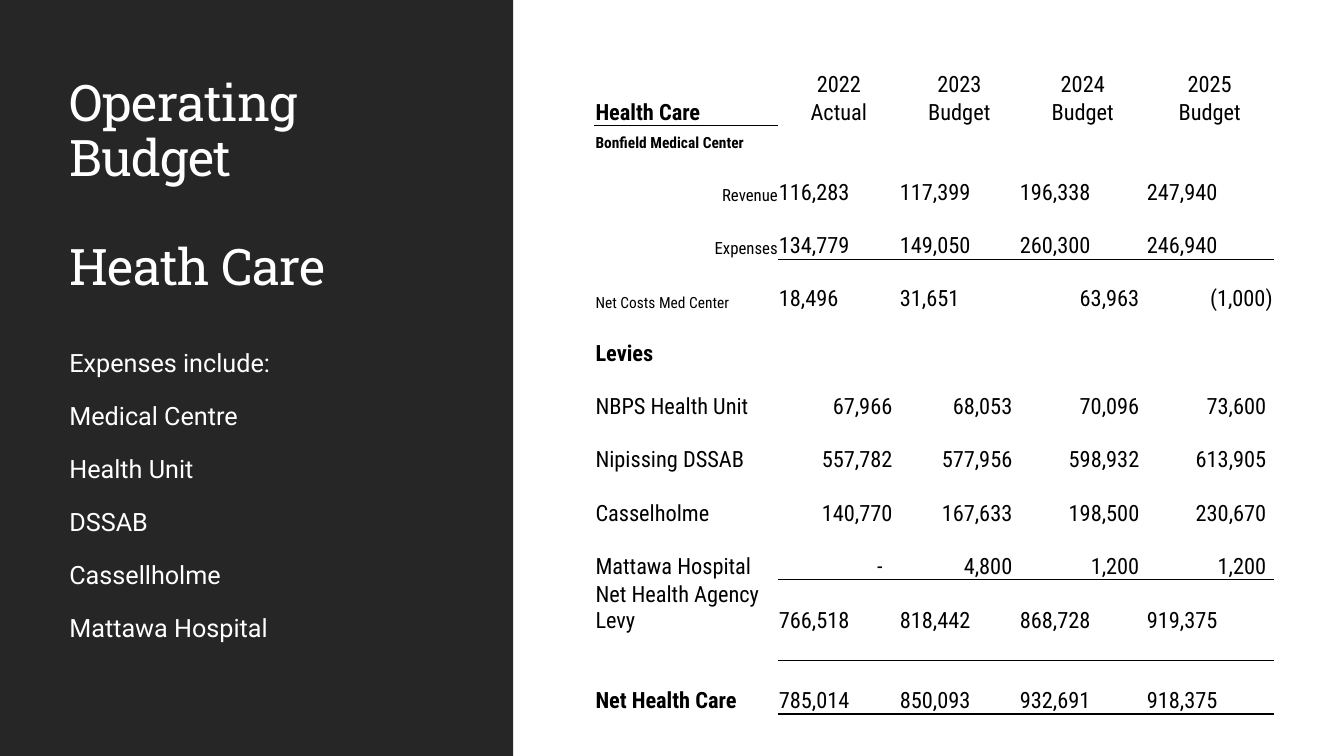
from lxml.etree import SubElement
from pptx import Presentation
from pptx.dml.color import RGBColor
from pptx.enum.shapes import MSO_SHAPE
from pptx.enum.text import MSO_ANCHOR, MSO_AUTO_SIZE, PP_ALIGN
from pptx.oxml.ns import qn
from pptx.util import Pt

WHITE = RGBColor(0xFF, 0xFF, 0xFF)
BLACK = RGBColor(0x00, 0x00, 0x00)
CHARCOAL = RGBColor(0x26, 0x26, 0x26)

LEFT, CENTER, RIGHT = PP_ALIGN.LEFT, PP_ALIGN.CENTER, PP_ALIGN.RIGHT
SINGLE, DOUBLE = 19.1, 38.1  # row heights
EDGE, AMOUNT_INSET, DASH_INSET = 0.4, 5, 12
LABEL = {}
HEADING = {"bold": True}
SMALL = {"size": 11}
SUBHEADING = {"size": 11, "bold": True}
INDENTED = {"size": 12, "align": RIGHT}

EXPENSES = ["Expenses include:", "Medical Centre", "Health Unit", "DSSAB",
            "Cassellholme", "Mattawa Hospital"]
COLUMN_WIDTHS = [131, 86.4, 85.7, 90.7, 90.7]

# Row height, label, label style, values, alignment of each value
BUDGET_ROWS = [
    (SINGLE, "", LABEL, ["2022", "2023", "2024", "2025"], [CENTER] * 4),
    (SINGLE, "Health Care", HEADING,
     ["Actual", "Budget", "Budget", "Budget"], [CENTER] * 4),
    (SINGLE, "Bonfield Medical Center", SUBHEADING, [""] * 4, [LEFT] * 4),
    (DOUBLE, "Revenue", INDENTED,
     ["116,283", "117,399", "196,338", "247,940"], [LEFT] * 4),
    (DOUBLE, "Expenses", INDENTED,
     ["134,779", "149,050", "260,300", "246,940"], [LEFT] * 4),
    (DOUBLE, "Net Costs Med Center", SMALL,
     ["18,496", "31,651", "63,963", "(1,000)"], [LEFT, LEFT, RIGHT, RIGHT]),
    (SINGLE, "", LABEL, [""] * 4, [LEFT] * 4),
    (SINGLE, "Levies", HEADING, [""] * 4, [LEFT] * 4),
    (DOUBLE, "NBPS Health Unit", LABEL,
     ["67,966", "68,053", "70,096", "73,600"], [RIGHT] * 4),
    (DOUBLE, "Nipissing DSSAB", LABEL,
     ["557,782", "577,956", "598,932", "613,905"], [RIGHT] * 4),
    (DOUBLE, "Casselholme", LABEL,
     ["140,770", "167,633", "198,500", "230,670"], [RIGHT] * 4),
    (DOUBLE, "Mattawa Hospital", LABEL,
     ["-", "4,800", "1,200", "1,200"], [RIGHT] * 4),
    (DOUBLE, "Net Health Agency Levy", LABEL,
     ["766,518", "818,442", "868,728", "919,375"], [LEFT] * 4),
    (SINGLE, "", LABEL, [""] * 4, [LEFT] * 4),
    (DOUBLE, "Net Health Care", HEADING,
     ["785,014", "850,093", "932,691", "918,375"], [LEFT] * 4),
]

# Line width under a cell, by (row, column)
RULES = {(row, column): width
         for row, width in ((4, 0.5), (11, 0.5), (13, 0.5), (14, 1))
         for column in range(1, 5)}
RULES[1, 0] = 0.5


class BudgetSlide:
    title_font = "Roboto Slab"
    body_font = "Roboto"
    table_font = "Roboto Condensed"

    def __init__(self, deck):
        self.page = deck.slides.add_slide(deck.slide_layouts[5])

    def add_span(self, para, text, font, size, color, bold=False):
        span = para.add_run()
        span.text = text
        span.font.name = font
        span.font.size = Pt(size)
        span.font.bold = bold
        span.font.color.rgb = color
        return span

    def panel(self, left, top, width, height):
        box = self.page.shapes.add_shape(
            MSO_SHAPE.RECTANGLE, Pt(left), Pt(top), Pt(width), Pt(height))
        box.shadow.inherit = False
        box.fill.solid()
        box.fill.fore_color.rgb = CHARCOAL
        box.line.fill.background()
        # Behind the title
        self.page.shapes._spTree.insert(2, box._element)

    def title(self, lines, left, top, width, height):
        box = self.page.shapes.title
        box.left, box.top = Pt(left), Pt(top)
        box.width, box.height = Pt(width), Pt(height)
        frame = box.text_frame
        frame.word_wrap = True
        frame.auto_size = MSO_AUTO_SIZE.NONE
        frame.vertical_anchor = MSO_ANCHOR.BOTTOM
        for index, text in enumerate(lines):
            para = frame.add_paragraph() if index else frame.paragraphs[0]
            para.alignment = LEFT
            para.line_spacing = 0.9
            para.space_before = Pt(39 if index else 0)
            span = self.add_span(para, text, self.title_font, 36, WHITE)
            span._r.get_or_add_rPr().set("spc", "-50")

    def text_list(self, lines, left, top, width, height):
        box = self.page.shapes.add_textbox(Pt(left), Pt(top), Pt(width), Pt(height))
        frame = box.text_frame
        frame.word_wrap = True
        for index, text in enumerate(lines):
            para = frame.add_paragraph() if index else frame.paragraphs[0]
            para.line_spacing = 1.1
            para.space_before, para.space_after = Pt(12), Pt(2)
            self.add_span(para, text, self.body_font, 18, WHITE)

    def rule(self, cell, side, width):
        line = SubElement(cell._tc.get_or_add_tcPr(), qn(f"a:{side}"), w=str(Pt(width)))
        fill = SubElement(line, qn("a:solidFill"))
        SubElement(fill, qn("a:srgbClr"), val=str(BLACK))

    def cell(self, cell, text, align=LEFT, size=16, bold=False, right_inset=EDGE):
        cell.margin_left = cell.margin_top = Pt(EDGE)
        cell.margin_right, cell.margin_bottom = Pt(right_inset), Pt(0)
        cell.vertical_anchor = MSO_ANCHOR.BOTTOM
        cell.fill.background()
        para = cell.text_frame.paragraphs[0]
        para.alignment = align
        if text:
            self.add_span(para, text, self.table_font, size, BLACK, bold)
        else:
            # Keeps an empty row from growing
            SubElement(para._p, qn("a:endParaRPr"), sz="1100")

    def table(self, rows, left, top):
        widths, heights = COLUMN_WIDTHS, [row[0] for row in rows]
        table = self.page.shapes.add_table(
            len(rows), len(widths), Pt(left), Pt(top),
            Pt(sum(widths)), Pt(sum(heights))).table
        table.first_row = table.horz_banding = False
        for column, width in zip(table.columns, widths):
            column.width = Pt(width)
        for number, (height, label, style, values, aligns) in enumerate(rows):
            table.rows[number].height = Pt(height)
            for column in range(len(widths)):
                cell = table.cell(number, column)
                for side, key in (("lnT", (number - 1, column)), ("lnB", (number, column))):
                    if key in RULES:
                        self.rule(cell, side, RULES[key])
            self.cell(table.cell(number, 0), label, **style)
            for column, (value, align) in enumerate(zip(values, aligns), 1):
                inset = EDGE
                if align == RIGHT and not value.startswith("("):
                    inset = DASH_INSET if value == "-" else AMOUNT_INSET
                self.cell(table.cell(number, column), value, align, right_inset=inset)


def main():
    deck = Presentation()
    deck.slide_width, deck.slide_height = Pt(960), Pt(540)
    slide = BudgetSlide(deck)

    # Dark side with title and list
    slide.panel(0, 0, 366.5, 540)
    slide.title(["Operating Budget", "Heath Care"], 42.5, 50.4, 277.2, 164.9)
    slide.text_list(EXPENSES, 42.5, 242.6, 285, 268.6)

    # Budget figures
    slide.table(BUDGET_ROWS, 425, 50.4)
    deck.save("out.pptx")


if __name__ == "__main__":
    main()
